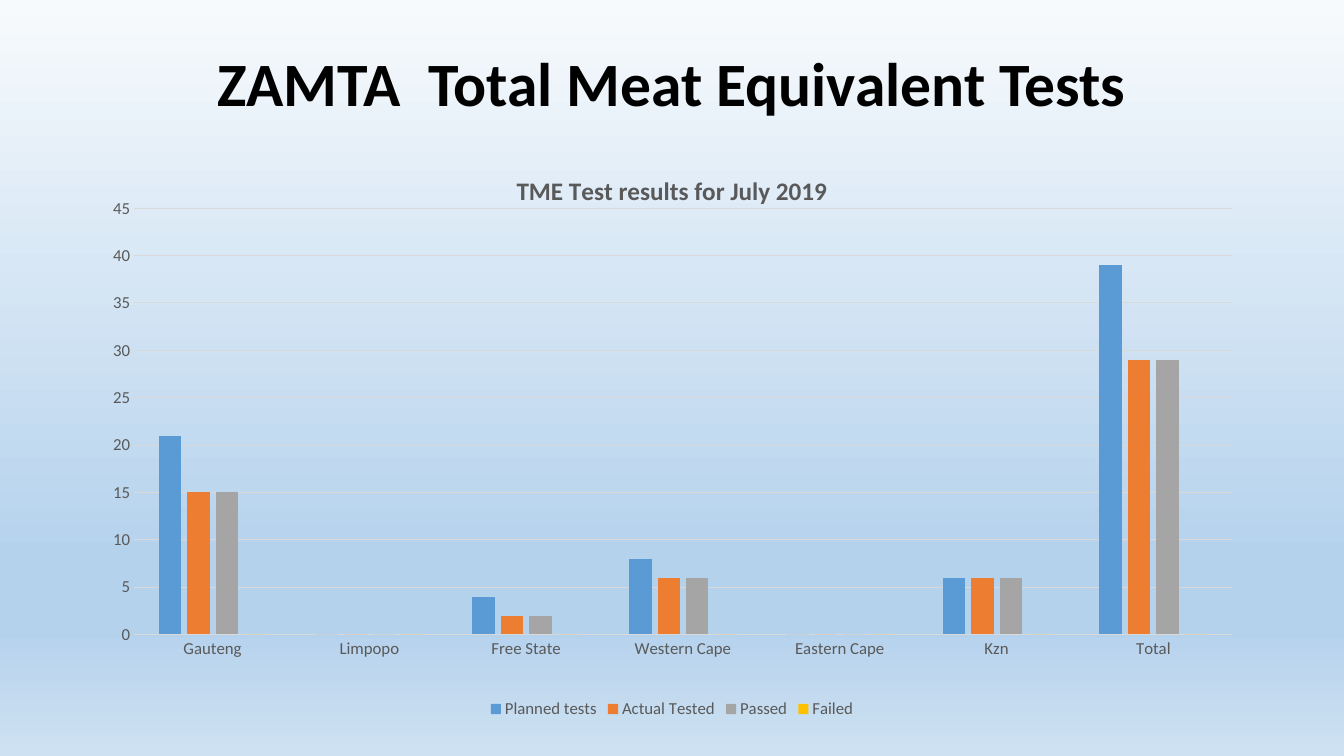
import pptx
import pptx.chart.data
import pptx.dml.color
import pptx.enum.chart
import pptx.enum.text
import pptx.oxml
import pptx.oxml.ns
import pptx.util

Cm = pptx.util.Cm
Pt = pptx.util.Pt
qn = pptx.oxml.ns.qn

HEAD = "ZAMTA  Total Meat Equivalent Tests"
NAME = "TME Test results for July 2019"
AREAS = ["Gauteng", "Limpopo", "Free State", "Western Cape", "Eastern Cape", "Kzn", "Total"]
TESTS = [
    ("Planned tests", "blue", [21, 0, 4, 8, 0, 6, 39]),
    ("Actual Tested", "orange", [15, 0, 2, 6, 0, 6, 29]),
    ("Passed", "grey", [15, 0, 2, 6, 0, 6, 29]),
    ("Failed", "gold", [0] * 7),
]
HUES = {
    "blue": "5B9BD5", "orange": "ED7D31", "grey": "A5A5A5", "gold": "FFC000",
    "black": "000000", "text": "595959", "rule": "D9D9D9",
    "top": "F7FAFD", "mid": "B5D2EC", "base": "CEE1F2",
}
FADE = [(0, "top"), (74, "mid"), (83, "mid"), (100, "base")]
PLOT = {"x": 0.036, "y": 0.098, "w": 0.947, "h": 0.747}
WIDE, HIGH = 33.87, 19.05
SIDE = 2.33
SPAN = WIDE - 2 * SIDE
HEADBOX = {"left": Cm(SIDE), "top": Cm(0.73), "width": Cm(SPAN), "height": Cm(2.88)}
GRAPHBOX = [Cm(n) for n in (SIDE, 3.84, SPAN, 14.38)]


def hue(key):
    return pptx.dml.color.RGBColor.from_string(HUES[key])


def put(item, **values):
    for key, value in values.items():
        setattr(item, key, value)


def style(font, size, key, bold=False):
    put(font, name="Calibri", size=Pt(size), bold=bold)
    font.color.rgb = hue(key)


def rule(line):
    line.color.rgb = hue("rule")
    line.width = Pt(0.75)


def shade(slide):
    fill = slide.background.fill
    fill.gradient()
    fill.gradient_angle = 270
    stops = next(slide.element.iter(qn("a:gsLst")))
    for stop in list(stops):
        stops.remove(stop)
    for place, key in FADE:
        stops.append(pptx.oxml.parse_xml(
            f'<a:gs {pptx.oxml.ns.nsdecls("a")} pos="{place * 1000}">'
            f'<a:srgbClr val="{HUES[key]}"/></a:gs>'))


def title(slide):
    shape = slide.shapes.title
    put(shape, **HEADBOX)
    frame = shape.text_frame
    put(frame, text=HEAD, word_wrap=True,
        vertical_anchor=pptx.enum.text.MSO_ANCHOR.MIDDLE)
    para = frame.paragraphs[0]
    put(para, alignment=pptx.enum.text.PP_ALIGN.CENTER, line_spacing=0.9)
    style(para.runs[0].font, 44, "black", True)


def place(chart):
    area = chart.element.find(".//" + qn("c:plotArea"))
    old = area.find(qn("c:layout"))
    if old is not None:
        area.remove(old)
    modes = "".join(f'<c:{k}Mode val="edge"/>' for k in "xy")
    sizes = "".join(f'<c:{k} val="{v}"/>' for k, v in PLOT.items())
    area.insert(0, pptx.oxml.parse_xml(
        f'<c:layout {pptx.oxml.ns.nsdecls("c")}><c:manualLayout>'
        f'<c:layoutTarget val="inner"/>{modes}{sizes}</c:manualLayout></c:layout>'))


def graph(slide):
    kinds = pptx.enum.chart
    data = pptx.chart.data.CategoryChartData()
    data.categories = AREAS
    for name, key, values in TESTS:
        data.add_series(name, values)
    chart = slide.shapes.add_chart(
        kinds.XL_CHART_TYPE.COLUMN_CLUSTERED, *GRAPHBOX, data).chart
    style(chart.font, 10, "black")
    put(chart, has_title=True, has_legend=True)
    frame = chart.chart_title.text_frame
    frame.text = NAME
    style(frame.paragraphs[0].runs[0].font, 18, "text", True)
    put(chart.legend, position=kinds.XL_LEGEND_POSITION.BOTTOM, include_in_layout=False)
    style(chart.legend.font, 12, "text")
    for axis in (chart.category_axis, chart.value_axis):
        put(axis, major_tick_mark=kinds.XL_TICK_MARK.NONE,
            minor_tick_mark=kinds.XL_TICK_MARK.NONE)
        style(axis.tick_labels.font, 12, "text")
    rule(chart.category_axis.format.line)
    scale = chart.value_axis
    put(scale, minimum_scale=0, maximum_scale=45, major_unit=5, has_major_gridlines=True)
    scale.format.line.fill.background()
    rule(scale.major_gridlines.format.line)
    plot = chart.plots[0]
    put(plot, gap_width=219, overlap=-27, vary_by_categories=False)
    for bars, (name, key, values) in zip(plot.series, TESTS):
        bars.format.fill.solid()
        bars.format.fill.fore_color.rgb = hue(key)
    place(chart)


def main():
    deck = pptx.Presentation()
    put(deck, slide_width=Cm(WIDE), slide_height=Cm(HIGH))
    slide = deck.slides.add_slide(deck.slide_layouts[5])
    shade(slide)
    title(slide)
    graph(slide)
    deck.save("out.pptx")


if __name__ == "__main__":
    main()
